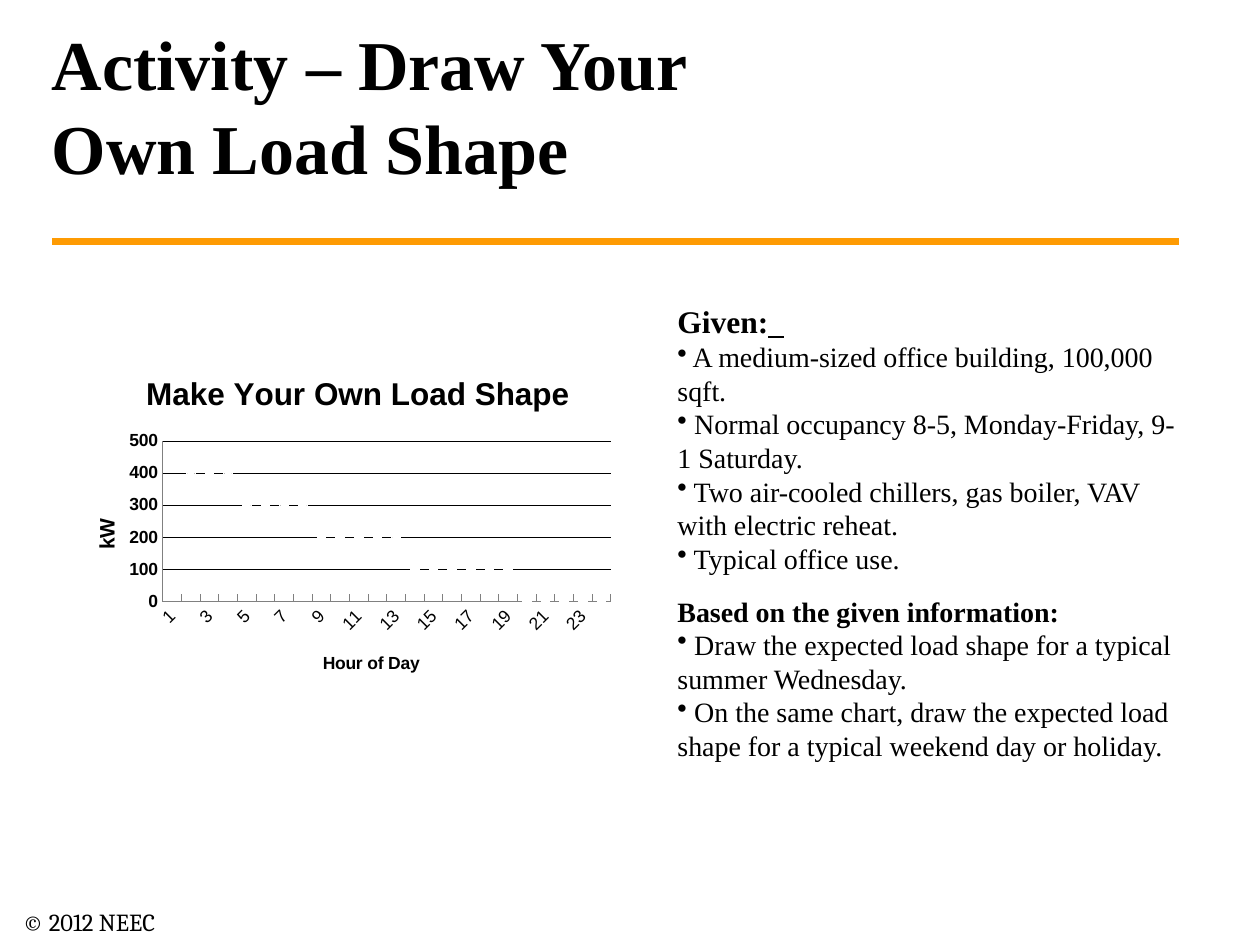
from dataclasses import dataclass

from lxml.etree import SubElement
from pptx import Presentation
from pptx.chart.data import CategoryChartData
from pptx.dml.color import RGBColor
from pptx.enum.chart import XL_CHART_TYPE, XL_MARKER_STYLE, XL_TICK_MARK
from pptx.enum.dml import MSO_LINE
from pptx.enum.shapes import MSO_CONNECTOR
from pptx.enum.text import MSO_ANCHOR
from pptx.oxml import parse_xml
from pptx.oxml.ns import nsdecls, qn
from pptx.util import Pt


@dataclass(frozen=True)
class Theme:
    ink: RGBColor = RGBColor(0, 0, 0)
    paper: RGBColor = RGBColor(255, 255, 255)
    accent: RGBColor = RGBColor(0xFE, 0x9B, 0x03)
    axis: RGBColor = RGBColor(0x80, 0x80, 0x80)
    serif: str = "Times New Roman"
    sans: str = "Arial"
    footer_font: str = "Cambria"
    title: float = 40
    heading: float = 18
    body: float = 16
    footer: float = 14
    chart_title: float = 18
    value_title: float = 12
    chart_text: float = 10
    leading: float = 1.2


@dataclass(frozen=True)
class Box:
    left: float
    top: float
    width: float
    height: float

    def lengths(self):
        return Pt(self.left), Pt(self.top), Pt(self.width), Pt(self.height)


@dataclass(frozen=True)
class Line:
    text: str
    size: float
    font: str = "Times New Roman"
    bold: bool = False
    bullet: bool = False
    before: float = 0
    underlined_tail: str = ""


THEME = Theme()
GIVEN = [
    "A medium-sized office building, 100,000 sqft.",
    "Normal occupancy 8-5, Monday-Friday, 9-1 Saturday.",
    "Two air-cooled chillers, gas boiler, VAV with electric reheat.",
    "Typical office use.",
]
TASKS = [
    "Draw the expected load shape for a typical summer Wednesday.",
    "On the same chart, draw the expected load shape for a typical weekend day or holiday.",
]
HOURLY_KW = [450] + [400] * 3 + [300] * 4 + [200] * 5 + [100] * 6 + [0] * 5


def style_font(font, size: float, name: str, bold: bool) -> None:
    font.size, font.name, font.bold = Pt(size), name, bold
    font.color.rgb = THEME.ink


def add_text(slide, box: Box, lines: list[Line], anchor=MSO_ANCHOR.TOP) -> None:
    frame = slide.shapes.add_textbox(*box.lengths()).text_frame
    frame.word_wrap = True
    frame.vertical_anchor = anchor
    for index, line in enumerate(lines):
        paragraph = frame.paragraphs[0] if index == 0 else frame.add_paragraph()
        paragraph.text = line.text
        paragraph.line_spacing = Pt(line.size * THEME.leading)
        if line.before:
            paragraph.space_before = Pt(line.before)
        if line.bullet:
            properties = paragraph._p.get_or_add_pPr()
            properties.set("marL", "0")
            properties.set("indent", "0")
            SubElement(properties, qn("a:buChar"), char="•")
        style_font(paragraph.font, line.size, line.font, line.bold)
        if line.underlined_tail:
            tail = paragraph.add_run()
            tail.text = line.underlined_tail
            tail.font.underline = True


def bullets(texts: list[str]) -> list[Line]:
    return [Line(f" {text}", THEME.body, bullet=True) for text in texts]


def add_rule(slide, left: float, right: float, y: float) -> None:
    rule = slide.shapes.add_connector(MSO_CONNECTOR.STRAIGHT, Pt(left), Pt(y), Pt(right), Pt(y))
    rule.line.color.rgb = THEME.accent
    rule.line.width = Pt(4)
    SubElement(rule._element.spPr, qn("a:effectLst"))


def place(part, position: int, **fractions: float) -> None:
    """Fix a chart part at fractions of the chart's size."""
    for old in part.findall(qn("c:layout")):
        part.remove(old)
    target = '<c:layoutTarget val="inner"/>' if "w" in fractions else ""
    modes = "".join(f'<c:{key}Mode val="edge"/>' for key in "xy")
    values = "".join(f'<c:{key} val="{value}"/>' for key, value in fractions.items())
    part.insert(position, parse_xml(
        f'<c:layout {nsdecls("c")}><c:manualLayout>{target}{modes}{values}'
        "</c:manualLayout></c:layout>"))


def set_chart_title(title, text: str, size: float, x: float, y: float) -> None:
    paragraph = title.text_frame.paragraphs[0]
    paragraph.text = text
    style_font(paragraph.font, size, THEME.sans, True)
    place(title._element, 1, x=x, y=y)


def style_axis(axis, tick_mark, bold: bool) -> None:
    axis.major_tick_mark = tick_mark
    axis.minor_tick_mark = XL_TICK_MARK.NONE
    axis.format.line.color.rgb = THEME.axis
    axis.format.line.width = Pt(0.5)
    style_font(axis.tick_labels.font, THEME.chart_text, THEME.sans, bold)


def add_load_chart(slide, box: Box) -> None:
    data = CategoryChartData()
    data.categories = [str(hour) for hour in range(1, 25)]
    data.add_series("Series 1", HOURLY_KW)
    chart = slide.shapes.add_chart(XL_CHART_TYPE.LINE_MARKERS, *box.lengths(), data).chart
    chart.has_legend = False
    style_font(chart.font, THEME.chart_text, THEME.sans, False)
    chart.has_title = True
    set_chart_title(chart.chart_title, "Make Your Own Load Shape", THEME.chart_title, 0.14, 0.03)
    place(chart._chartSpace.chart.plotArea, 0, x=0.18, y=0.25, w=0.8, h=0.48)

    hours, load = chart.category_axis, chart.value_axis
    style_axis(hours, XL_TICK_MARK.INSIDE, False)
    set_chart_title(hours.axis_title, "Hour of Day", THEME.chart_text, 0.46, 0.87)
    hours._element.find(qn("c:txPr")).find(qn("a:bodyPr")).set("rot", "-2700000")
    label_skip = parse_xml(f'<c:tickLblSkip {nsdecls("c")} val="2"/>')
    hours._element.find(qn("c:noMultiLvlLbl")).addprevious(label_skip)

    style_axis(load, XL_TICK_MARK.NONE, True)
    set_chart_title(load.axis_title, "kW", THEME.value_title, 0.05, 0.47)
    load.axis_title.text_frame._txBody.bodyPr.set("rot", "-5400000")
    load.minimum_scale, load.maximum_scale, load.major_unit = 0, 500, 100
    grid = load.major_gridlines.format.line
    grid.color.rgb = THEME.ink
    grid.width = Pt(0.25)
    grid.dash_style = MSO_LINE.ROUND_DOT

    chart.plots[0].vary_by_categories = False
    series = chart.plots[0].series[0]
    series.smooth = False
    series.format.line.fill.background()
    series.marker.style = XL_MARKER_STYLE.DIAMOND
    series.marker.size = 5
    series.marker.format.fill.solid()
    series.marker.format.fill.fore_color.rgb = THEME.paper
    series.marker.format.line.fill.background()


def main() -> None:
    presentation = Presentation()
    presentation.slide_width, presentation.slide_height = Pt(720), Pt(540)
    slide = presentation.slides.add_slide(presentation.slide_layouts[6])
    add_rule(slide, 30, 674, 138)
    add_text(slide, Box(5.8, 514.8, 187, 24.5),
             [Line("© 2012 NEEC", THEME.footer, THEME.footer_font)])
    add_text(slide, Box(22.5, 21, 642, 77.5),
             [Line("Activity – Draw Your \vOwn Load Shape", THEME.title, bold=True)],
             MSO_ANCHOR.MIDDLE)
    add_text(slide, Box(380, 169, 300, 324), [
        Line("Given:", THEME.heading, bold=True, underlined_tail="  "),
        *bullets(GIVEN),
        Line("Based on the given information:", THEME.body, bold=True, before=11),
        *bullets(TASKS),
    ])
    add_load_chart(slide, Box(35.5, 204, 320, 191.5))
    presentation.save("out.pptx")


if __name__ == "__main__":
    main()
